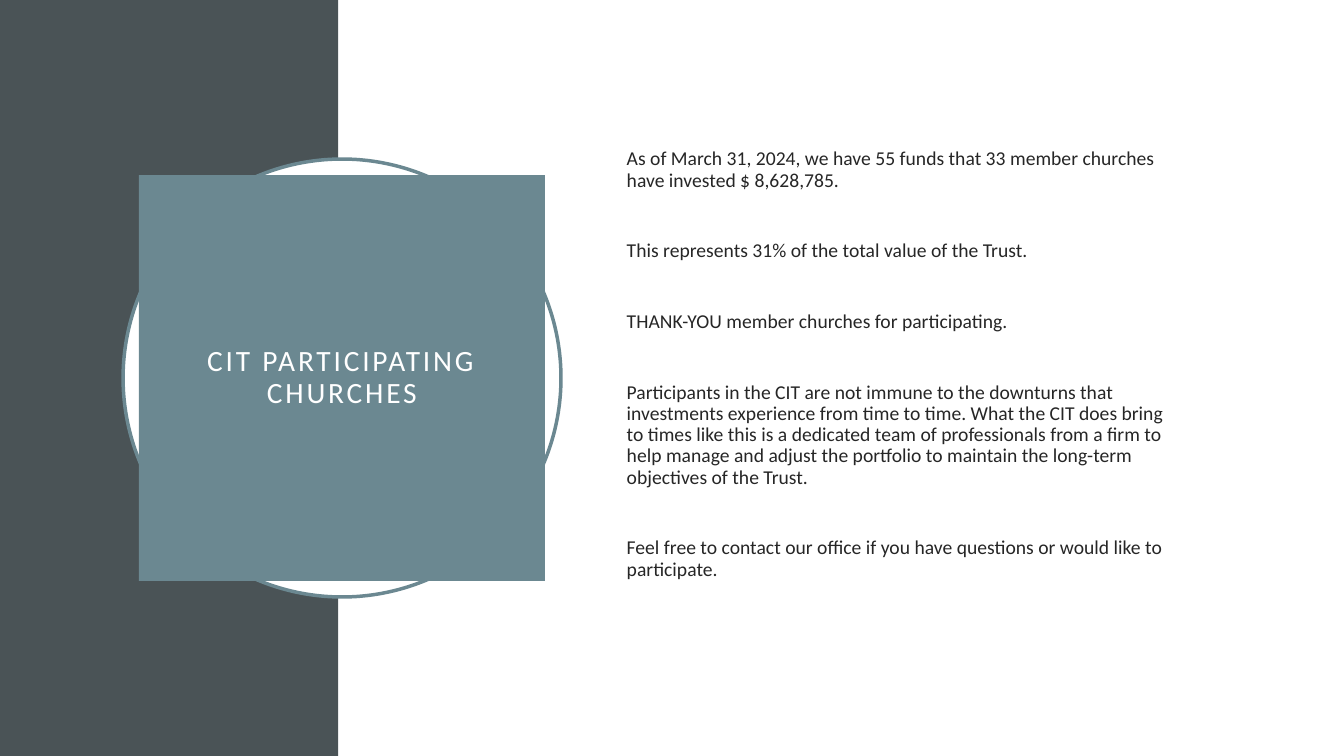
from dataclasses import dataclass

from pptx import Presentation
from pptx.dml.color import RGBColor
from pptx.enum.shapes import MSO_SHAPE
from pptx.enum.text import MSO_ANCHOR, PP_ALIGN
from pptx.util import Pt


@dataclass(frozen=True)
class Theme:
    """Colours, font and type sizes of the slide."""

    slate: RGBColor = RGBColor(0x4A, 0x53, 0x56)
    teal: RGBColor = RGBColor(0x6B, 0x88, 0x91)
    white: RGBColor = RGBColor(0xFF, 0xFF, 0xFF)
    ink: RGBColor = RGBColor(0x26, 0x26, 0x26)
    font: str = "Calibri"
    title_size: int = 21
    body_size: int = 14


THEME = Theme()
PAGE_WIDTH, PAGE_HEIGHT = 960, 540
BAND_WIDTH = 241.7
TITLE = "CIT PARTICIPATING CHURCHES"
MESSAGES = [
    "As of March 31, 2024, we have 55 funds that 33 member churches have invested $ 8,628,785.",
    "This represents 31% of the total value of the Trust.",
    "THANK-YOU member churches for participating.",
    "Participants in the CIT are not immune to the downturns that investments experience "
    "from time to time. What the CIT does bring to times like this is a dedicated team of "
    "professionals from a firm to help manage and adjust the portfolio to maintain the "
    "long-term objectives of the Trust.",
    "Feel free to contact our office if you have questions or would like to participate.",
]


def add_panel(page, kind, left, top, width, height, fill, outline=None):
    """Add a flat filled shape, outlined only if a colour is given."""
    panel = page.shapes.add_shape(kind, Pt(left), Pt(top), Pt(width), Pt(height))
    panel.shadow.inherit = False
    panel.fill.solid()
    panel.fill.fore_color.rgb = fill
    if outline is None:
        panel.line.fill.background()
    else:
        panel.line.color.rgb = outline
        panel.line.width = Pt(2.5)
    return panel


def style_paragraph(para, size, color, align):
    """Format one paragraph and its runs."""
    para.alignment = align
    para.line_spacing = 0.9
    for span in para.runs:
        span.font.name = THEME.font
        span.font.size = Pt(size)
        span.font.color.rgb = color


def add_title(panel, text):
    """Write the letter-spaced title in the middle of a panel."""
    frame = panel.text_frame
    frame.word_wrap = True
    frame.vertical_anchor = MSO_ANCHOR.MIDDLE
    frame.margin_left = frame.margin_right = Pt(14.4)
    frame.margin_top = frame.margin_bottom = Pt(14.4)
    frame.text = text
    para = frame.paragraphs[0]
    style_paragraph(para, THEME.title_size, THEME.white, PP_ALIGN.CENTER)
    for span in para.runs:
        span.font._element.set("spc", "200")


def add_messages(page, messages):
    """Add the body text, with wide gaps between its paragraphs."""
    box = page.shapes.add_textbox(Pt(440.6), Pt(110.2), Pt(419), Pt(398.9))
    frame = box.text_frame
    frame.word_wrap = True
    frame.vertical_anchor = MSO_ANCHOR.MIDDLE
    frame.margin_right = Pt(20)
    frame.margin_bottom = Pt(102)
    frame.text = "\n".join(messages)
    for index, para in enumerate(frame.paragraphs):
        style_paragraph(para, THEME.body_size, THEME.ink, PP_ALIGN.LEFT)
        para.space_before = Pt(35.4 if index else 0)


def main():
    """Build the slide and save it."""
    deck = Presentation()
    deck.slide_width, deck.slide_height = Pt(PAGE_WIDTH), Pt(PAGE_HEIGHT)
    page = deck.slides.add_slide(deck.slide_layouts[6])
    add_panel(page, MSO_SHAPE.RECTANGLE, 0, 0, BAND_WIDTH, PAGE_HEIGHT, THEME.slate)
    add_panel(page, MSO_SHAPE.RECTANGLE, BAND_WIDTH, 0, PAGE_WIDTH - BAND_WIDTH,
              PAGE_HEIGHT, THEME.white)
    add_panel(page, MSO_SHAPE.OVAL, 87.9, 113.6, 312.8, 312.8, THEME.white, THEME.teal)
    title_panel = add_panel(page, MSO_SHAPE.RECTANGLE, 99.2, 125, 290, 290, THEME.teal)
    add_title(title_panel, TITLE)
    add_messages(page, MESSAGES)
    deck.save("out.pptx")


if __name__ == "__main__":
    main()
